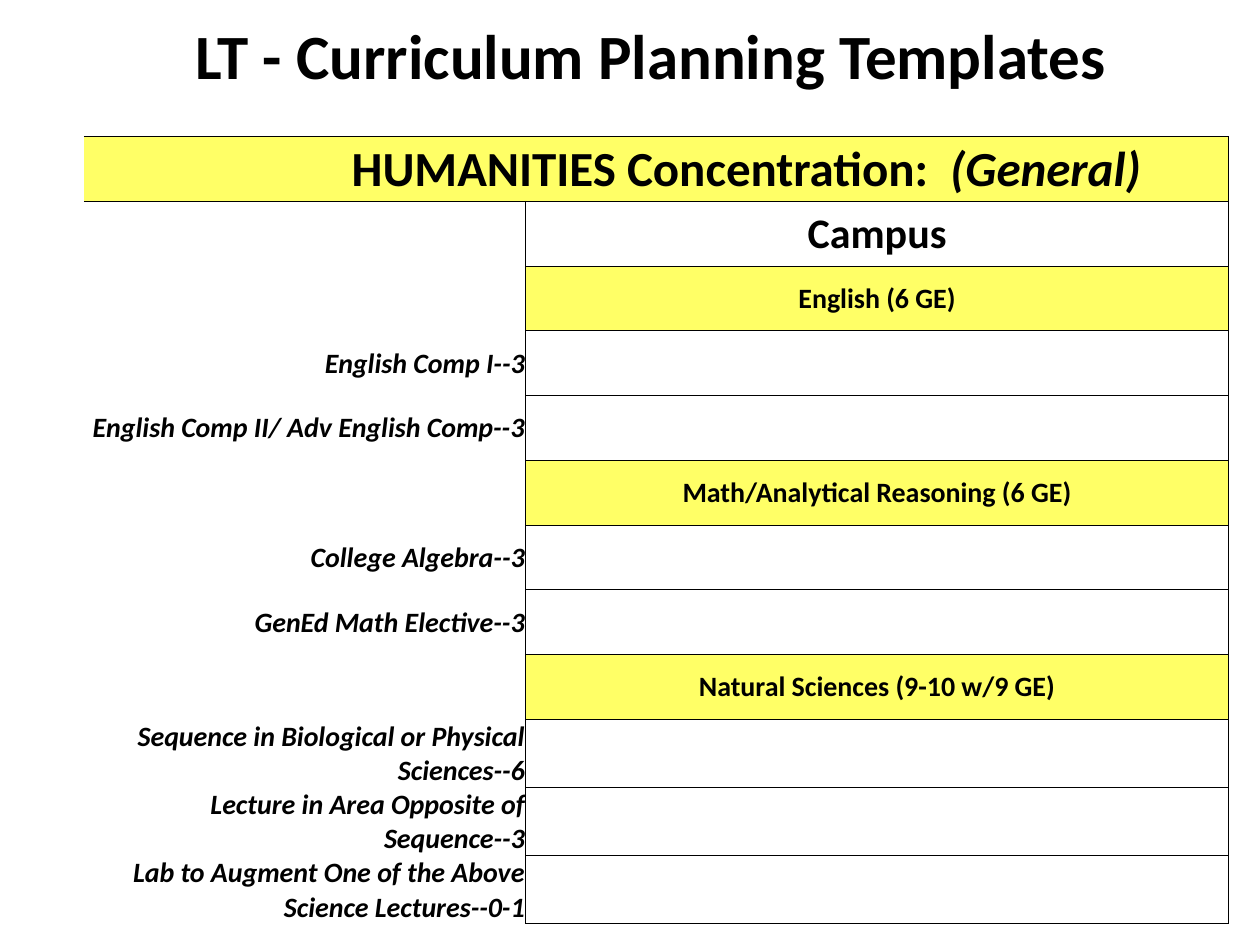
from dataclasses import dataclass
from typing import Optional

from lxml.etree import SubElement
from pptx import Presentation
from pptx.dml.color import RGBColor
from pptx.enum.text import MSO_ANCHOR, PP_ALIGN
from pptx.oxml.ns import qn
from pptx.util import Emu, Pt

EMU_PER_PX = 6350  # 144 px to the inch
NO_STYLE = "{2D5ABB26-0587-4C30-8999-92F81FD0307C}"


@dataclass(frozen=True)
class Theme:
    font: str = "Calibri"
    ink: str = "000000"
    band: str = "FFFF66"
    title: int = 36
    header: int = 28
    campus: int = 24
    body: int = 16
    thin: float = 0.5
    thick: float = 1.0


@dataclass(frozen=True)
class PlanRow:
    """A course label on the left, or a heading on the right."""
    label: str = ""
    heading: str = ""
    size: int = 16
    banded: bool = True


THEME = Theme()
COLS = [152, 153, 200, 803]
ROW_H = 74
LABEL_END, COURSE = 2, 3
HEADER = ["HUMANITIES Concentration:  ", "(General)"]
ROWS = [
    PlanRow(heading="Campus", size=THEME.campus, banded=False),
    PlanRow(heading="English (6 GE)"),
    PlanRow("English Comp I--3"),
    PlanRow("English Comp II/ Adv English Comp--3"),
    PlanRow(heading="Math/Analytical Reasoning (6 GE)"),
    PlanRow("College Algebra--3"),
    PlanRow("GenEd Math Elective--3"),
    PlanRow(heading="Natural Sciences (9-10 w/9 GE)"),
    PlanRow("Sequence in Biological or Physical Sciences--6"),
    PlanRow("Lecture in Area Opposite of Sequence--3"),
    PlanRow("Lab to Augment One of the Above Science Lectures--0-1"),
]


def px(n: int) -> Emu:
    return Emu(n * EMU_PER_PX)


def style_run(r, size: int, italic: bool = False) -> None:
    f = r.font
    f.name, f.size, f.bold, f.italic = THEME.font, Pt(size), True, italic
    f.color.rgb = RGBColor.from_string(THEME.ink)


def write_cell(cell, text: str, size: int, align: PP_ALIGN, italic: bool = False) -> None:
    cell.text_frame.text = text
    p = cell.text_frame.paragraphs[0]
    p.alignment = align
    for r in p.runs:
        style_run(r, size, italic)


def format_cell(cell, sides: str, fill: Optional[str] = None,
                right: float = THEME.thin) -> None:
    """Set insets, the ruled sides (any of L, R, T, B) and the fill."""
    cell.margin_left = cell.margin_right = cell.margin_top = px(1)
    cell.margin_bottom = px(0)
    cell.vertical_anchor = MSO_ANCHOR.MIDDLE
    tc_pr = cell._tc.get_or_add_tcPr()
    for side in "LRTB":
        width = right if side == "R" else THEME.thin
        ln = SubElement(tc_pr, qn(f"a:ln{side}"), w=str(int(Pt(width))))
        if side in sides:
            solid = SubElement(ln, qn("a:solidFill"))
            SubElement(solid, qn("a:srgbClr"), val=THEME.ink)
        else:
            SubElement(ln, qn("a:noFill"))
    if fill:
        cell.fill.solid()
        cell.fill.fore_color.rgb = RGBColor.from_string(fill)
    else:
        cell.fill.background()


def add_title(s, text: str) -> None:
    tf = s.shapes.add_textbox(px(96), px(24), px(1296), px(76)).text_frame
    tf.word_wrap = True
    tf.vertical_anchor = MSO_ANCHOR.MIDDLE
    tf.text = text
    p = tf.paragraphs[0]
    p.alignment = PP_ALIGN.CENTER
    style_run(p.runs[0], THEME.title)


def draw_header(table) -> None:
    for col in range(len(COLS)):
        format_cell(table.cell(0, col), "RTB" if col >= LABEL_END else "TB",
                    THEME.band, THEME.thick)
    cell = table.cell(0, LABEL_END)
    cell.merge(table.cell(0, COURSE))
    write_cell(cell, HEADER[0], THEME.header, PP_ALIGN.LEFT)
    r = cell.text_frame.paragraphs[0].add_run()
    r.text = HEADER[1]
    style_run(r, THEME.header, italic=True)


def draw_row(table, i: int, row: PlanRow) -> None:
    top = "T" if i == 1 else ""
    for col in range(COURSE):
        ruled = row.label or col == LABEL_END
        format_cell(table.cell(i, col), top + ("R" if ruled else ""))
    if row.label:
        cell = table.cell(i, 0)
        cell.merge(table.cell(i, LABEL_END))
        write_cell(cell, row.label, row.size, PP_ALIGN.RIGHT, italic=True)
    course = table.cell(i, COURSE)
    fill = THEME.band if row.heading and row.banded else None
    format_cell(course, "LRTB", fill, THEME.thick)
    if row.heading:
        write_cell(course, row.heading, row.size, PP_ALIGN.CENTER)


def add_plan(s) -> None:
    count = len(ROWS) + 1
    frame = s.shapes.add_table(count, len(COLS), px(96), px(156),
                               px(sum(COLS)), px(ROW_H * count))
    table = frame.table
    table.first_row = table.horz_banding = False
    table._tbl.tblPr.find(qn("a:tableStyleId")).text = NO_STYLE
    for column, width in zip(table.columns, COLS):
        column.width = px(width)
    for table_row in table.rows:
        table_row.height = px(ROW_H)
    draw_header(table)
    for i, row in enumerate(ROWS, start=1):
        draw_row(table, i, row)


def main() -> None:
    prs = Presentation()
    prs.slide_width, prs.slide_height = px(1440), px(1080)
    s = prs.slides.add_slide(prs.slide_layouts[6])
    # Title
    add_title(s, "LT - Curriculum Planning Templates")
    # Planning table
    add_plan(s)
    prs.save("out.pptx")


if __name__ == "__main__":
    main()
